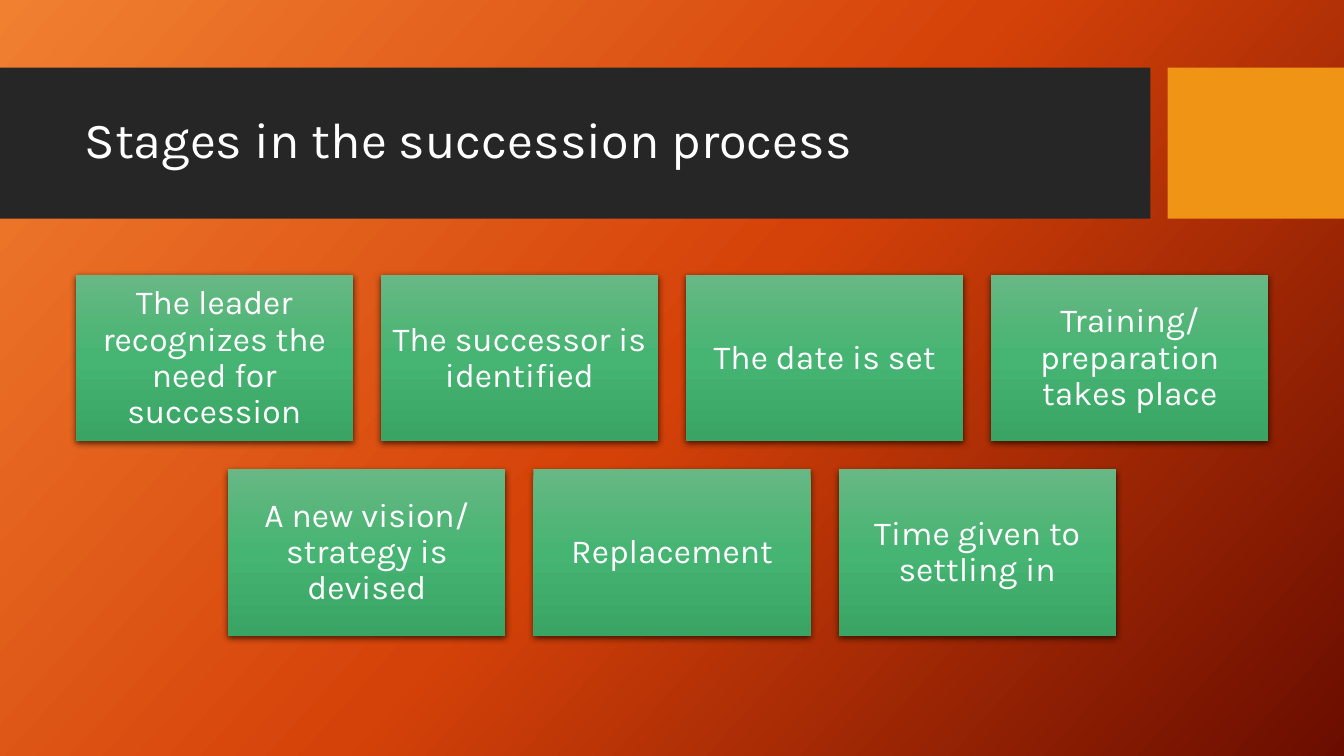
import pptx
import pptx.util
import pptx.dml.color
import pptx.enum.shapes
import pptx.enum.text
import pptx.oxml
import pptx.oxml.ns
from pptx.util import Inches

COLORS = {"band": "262626", "accent": "F09415", "text": "FFFFFF", "shade": "000000"}
GLOW = [(0, "F18031"), (50, "D54209"), (100, "6A0D00")]
GREEN = [(0, "67B884"), (50, "46B472"), (100, "3AA464")]
ROWS = [
    ["The leader recognizes the need for succession", "The successor is identified",
     "The date is set", "Training/ preparation takes place"],
    ["A new vision/ strategy is devised", "Replacement", "Time given to settling in"],
]
WIDE, TALL = 13.33, 7.5
CARD_W, CARD_H, GAP, TOP = 2.75, 1.65, 0.277, 2.73
NS = pptx.oxml.ns.nsdecls("a")


def rgb(name):
    """Return the named colour."""
    return pptx.dml.color.RGBColor.from_string(COLORS[name])


def blend(fill, root, stops, angle):
    """Fill with a linear gradient, its angle measured clockwise."""
    fill.gradient()
    fill.gradient_angle = 360 - angle
    items = root.find(".//" + pptx.oxml.ns.qn("a:gsLst"))
    for old in list(items):
        items.remove(old)
    for pos, color in stops:
        items.append(pptx.oxml.parse_xml(
            f'<a:gs {NS} pos="{pos * 1000}"><a:srgbClr val="{color}"/></a:gs>'))


def shade(shape):
    """Give a shape a soft shadow below it."""
    effects = shape.element.spPr.find(pptx.oxml.ns.qn("a:effectLst"))
    effects.append(pptx.oxml.parse_xml(
        f'<a:outerShdw {NS} blurRad="{pptx.util.Pt(4.5)}" dist="{pptx.util.Pt(1.5)}" '
        f'dir="5400000" algn="ctr" rotWithShape="0"><a:srgbClr val="{COLORS["shade"]}">'
        '<a:alpha val="63000"/></a:srgbClr></a:outerShdw>'))


def write(shape, text, size, align, inset):
    """Write one paragraph, centred in height."""
    frame = shape.text_frame
    form = {"word_wrap": True, "vertical_anchor": pptx.enum.text.MSO_ANCHOR.MIDDLE}
    for side in ("left", "right", "top", "bottom"):
        form["margin_" + side] = Inches(inset if side in ("left", "right") else inset / 2)
    for key, value in form.items():
        setattr(frame, key, value)
    para = frame.paragraphs[0]
    para.text, para.alignment, para.line_spacing = text, align, 0.9
    look = {"name": "Karla", "size": pptx.util.Pt(size)}
    for key, value in look.items():
        setattr(para.font, key, value)
    para.font.color.rgb = rgb("text")


def block(slide, left, top, width, height):
    """Add a rectangle without a line or shadow."""
    shape = slide.shapes.add_shape(
        pptx.enum.shapes.MSO_SHAPE.RECTANGLE,
        Inches(left), Inches(top), Inches(width), Inches(height))
    shape.shadow.inherit = False
    shape.line.fill.background()
    return shape


def bar(slide, left, width, color):
    """Add a plain block of the title band."""
    shape = block(slide, left, 0.67, width, 1.5)
    shape.fill.solid()
    shape.fill.fore_color.rgb = rgb(color)


def title(slide, text):
    """Add the slide title."""
    box = slide.shapes.add_textbox(Inches(0.74), Inches(0.82), Inches(10.51), Inches(1.18))
    write(box, text, 36, pptx.enum.text.PP_ALIGN.LEFT, 0.1)


def card(slide, left, top, text):
    """Add one stage card."""
    shape = block(slide, left, top, CARD_W, CARD_H)
    blend(shape.fill, shape.element.spPr, GREEN, 90)
    shade(shape)
    write(shape, text, 24, pptx.enum.text.PP_ALIGN.CENTER, 0.1)


def main():
    """Build the slide and save it."""
    deck = pptx.Presentation()
    deck.slide_width, deck.slide_height = Inches(WIDE), Inches(TALL)
    slide = deck.slides.add_slide(deck.slide_layouts[6])
    blend(slide.background.fill, slide.element, GLOW, 42)
    bar(slide, 0, 11.41, "band")
    bar(slide, 11.58, 1.75, "accent")
    title(slide, "Stages in the succession process")
    for row, stages in enumerate(ROWS):
        span = len(stages) * (CARD_W + GAP) - GAP
        for col, stage in enumerate(stages):
            left = (WIDE - span) / 2 + col * (CARD_W + GAP)
            card(slide, left, TOP + row * (CARD_H + GAP), stage)
    deck.save("out.pptx")


if __name__ == "__main__":
    main()
